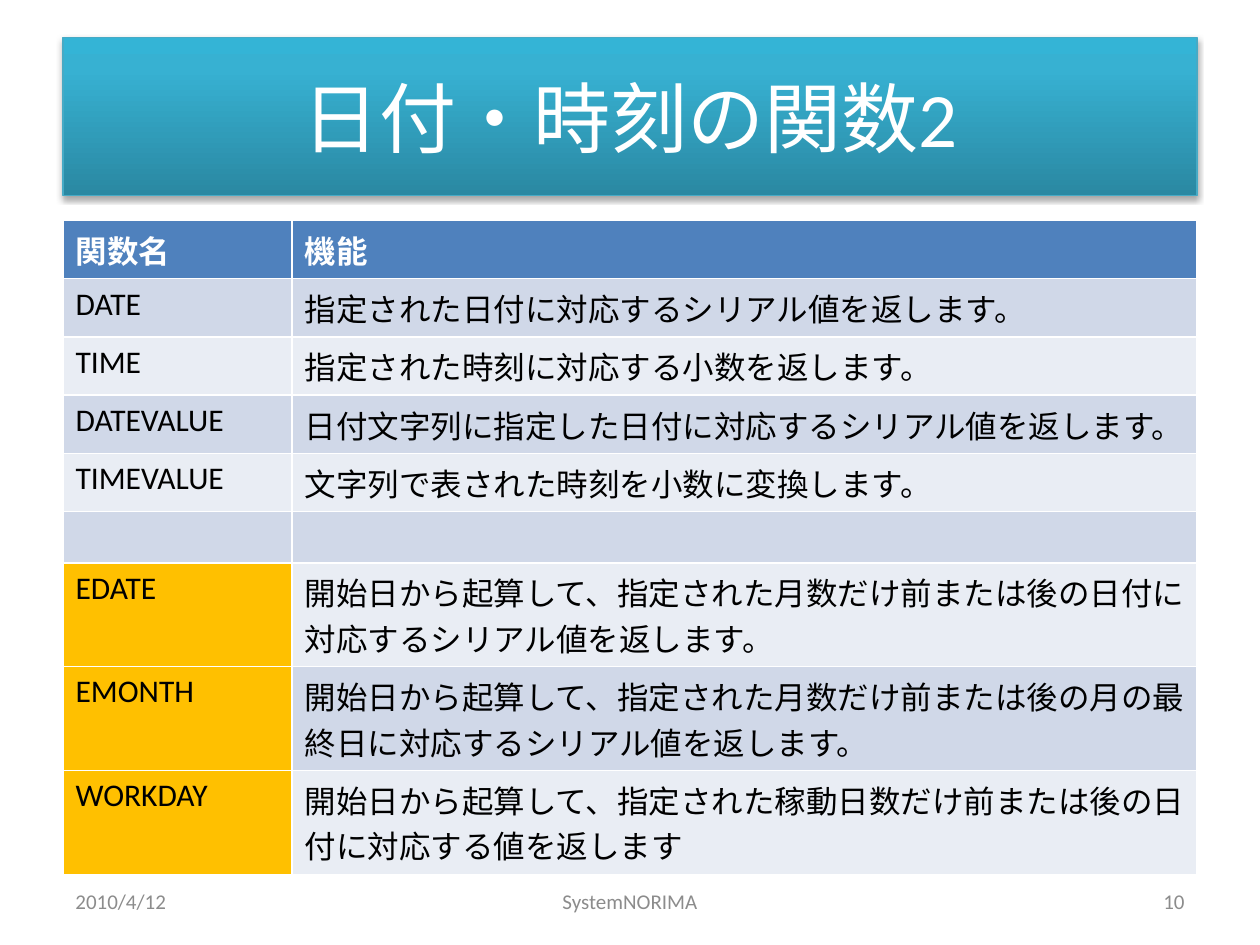
from dataclasses import dataclass

from lxml import etree
from pptx import Presentation
from pptx.dml.color import RGBColor
from pptx.enum.text import MSO_ANCHOR, PP_ALIGN
from pptx.oxml.ns import qn
from pptx.util import Pt

LEFT, CENTER, RIGHT = PP_ALIGN.LEFT, PP_ALIGN.CENTER, PP_ALIGN.RIGHT
MIDDLE = MSO_ANCHOR.MIDDLE

MARGIN, CONTENT_WIDTH = 36, 648
FUNCTION_ROWS = [
    ("関数名", "機能"),
    ("DATE", "指定された日付に対応するシリアル値を返します。"),
    ("TIME", "指定された時刻に対応する小数を返します。"),
    ("DATEVALUE", "日付文字列に指定した日付に対応するシリアル値を返します。"),
    ("TIMEVALUE", "文字列で表された時刻を小数に変換します。"),
    ("", ""),
    ("EDATE", "開始日から起算して、指定された月数だけ前または後の日付に対応するシリアル値を返します。"),
    ("EMONTH", "開始日から起算して、指定された月数だけ前または後の月の最終日に対応するシリアル値を返します。"),
    ("WORKDAY", "開始日から起算して、指定された稼動日数だけ前または後の日付に対応する値を返します"),
]
HIGHLIGHTED = {"EDATE", "EMONTH", "WORKDAY"}
FOOTERS = [
    (36, 168, "2010/4/12", LEFT),
    (246, 228, "SystemNORIMA", CENTER),
    (516, 168, "10", RIGHT),
]


@dataclass(frozen=True)
class Theme:
    """Colours, font and type sizes of the slide."""

    font: str = "Calibri"
    title_size: int = 44
    table_size: int = 18
    footer_size: int = 12
    light: str = "FFFFFF"
    dark: str = "000000"
    muted: str = "8C8C8C"
    header: str = "4F81BD"
    bands: tuple = ("D0D8E8", "E9EDF4")
    highlight: str = "FFC000"
    title_line: str = "46AAC5"
    title_stops: tuple = ((0, "2A88A2"), (80, "37B1D2"), (100, "34B4D6"))


class SlideBuilder:
    """Adds styled elements to the current slide."""

    def __init__(self, slide, theme):
        self.slide = slide
        self.theme = theme

    def set_text(self, text_frame, text, size, color, bold=False, align=LEFT):
        """Set the text and format its runs."""
        text_frame.text = text
        for paragraph in text_frame.paragraphs:
            paragraph.alignment = align
            for run in paragraph.runs:
                run.font.name = self.theme.font
                run.font.size = Pt(size)
                run.font.bold = bold
                run.font.color.rgb = RGBColor.from_string(color)

    def title(self, text, left, top, width, height):
        """Fill the title placeholder as a gradient banner with a shadow."""
        shape = self.slide.shapes.title
        shape.left, shape.top = Pt(left), Pt(top)
        shape.width, shape.height = Pt(width), Pt(height)
        shape.fill.gradient()
        shape.fill.gradient_angle = 90
        stops = shape._element.spPr.find(".//" + qn("a:gsLst"))
        stops.clear()
        for position, color in self.theme.title_stops:
            stop = etree.SubElement(stops, qn("a:gs"), pos=str(position * 1000))
            etree.SubElement(stop, qn("a:srgbClr"), val=color)
        shape.line.color.rgb = RGBColor.from_string(self.theme.title_line)
        shape.line.width = Pt(0.75)
        shape.shadow.inherit = False
        effects = shape._element.spPr.find(qn("a:effectLst"))
        shadow = etree.SubElement(
            effects, qn("a:outerShdw"), blurRad=str(Pt(3.1)), dist=str(Pt(1.8)),
            dir="5400000", rotWithShape="0")
        shadow_color = etree.SubElement(shadow, qn("a:srgbClr"), val=self.theme.dark)
        etree.SubElement(shadow_color, qn("a:alpha"), val="35000")
        shape.text_frame.vertical_anchor = MIDDLE
        self.set_text(shape.text_frame, text, self.theme.title_size, self.theme.light,
                      align=CENTER)

    def table(self, rows, left, top, column_widths, row_height):
        """Add a banded table with highlighted names in the first column."""
        theme = self.theme
        table = self.slide.shapes.add_table(
            len(rows), len(column_widths), Pt(left), Pt(top),
            Pt(sum(column_widths)), Pt(row_height * len(rows))).table
        for column, width in zip(table.columns, column_widths):
            column.width = Pt(width)
        for row_index, texts in enumerate(rows):
            is_header = row_index == 0
            row_fill = theme.header if is_header else theme.bands[(row_index - 1) % 2]
            for column_index, text in enumerate(texts):
                cell = table.cell(row_index, column_index)
                fill = theme.highlight if text in HIGHLIGHTED else row_fill
                cell.fill.solid()
                cell.fill.fore_color.rgb = RGBColor.from_string(fill)
                self.set_text(cell.text_frame, text, theme.table_size,
                              theme.light if is_header else theme.dark, is_header)

    def footer(self, text, left, top, width, height, align):
        """Add one muted text at the foot of the slide."""
        text_frame = self.slide.shapes.add_textbox(
            Pt(left), Pt(top), Pt(width), Pt(height)).text_frame
        text_frame.word_wrap = True
        text_frame.vertical_anchor = MIDDLE
        self.set_text(text_frame, text, self.theme.footer_size, self.theme.muted,
                      align=align)


def main():
    """Build the slide and save it."""
    presentation = Presentation()
    presentation.slide_width, presentation.slide_height = Pt(720), Pt(540)
    slide = presentation.slides.add_slide(presentation.slide_layouts[5])
    builder = SlideBuilder(slide, Theme())
    builder.title("日付・時刻の関数2", MARGIN, 21.6, CONTENT_WIDTH, 90)
    name_width = 131
    builder.table(FUNCTION_ROWS, MARGIN, 126,
                  (name_width, CONTENT_WIDTH - name_width), 29.2)
    for left, width, text, align in FOOTERS:
        builder.footer(text, left, 500.5, width, 28.75, align)
    presentation.save("out.pptx")


if __name__ == "__main__":
    main()
